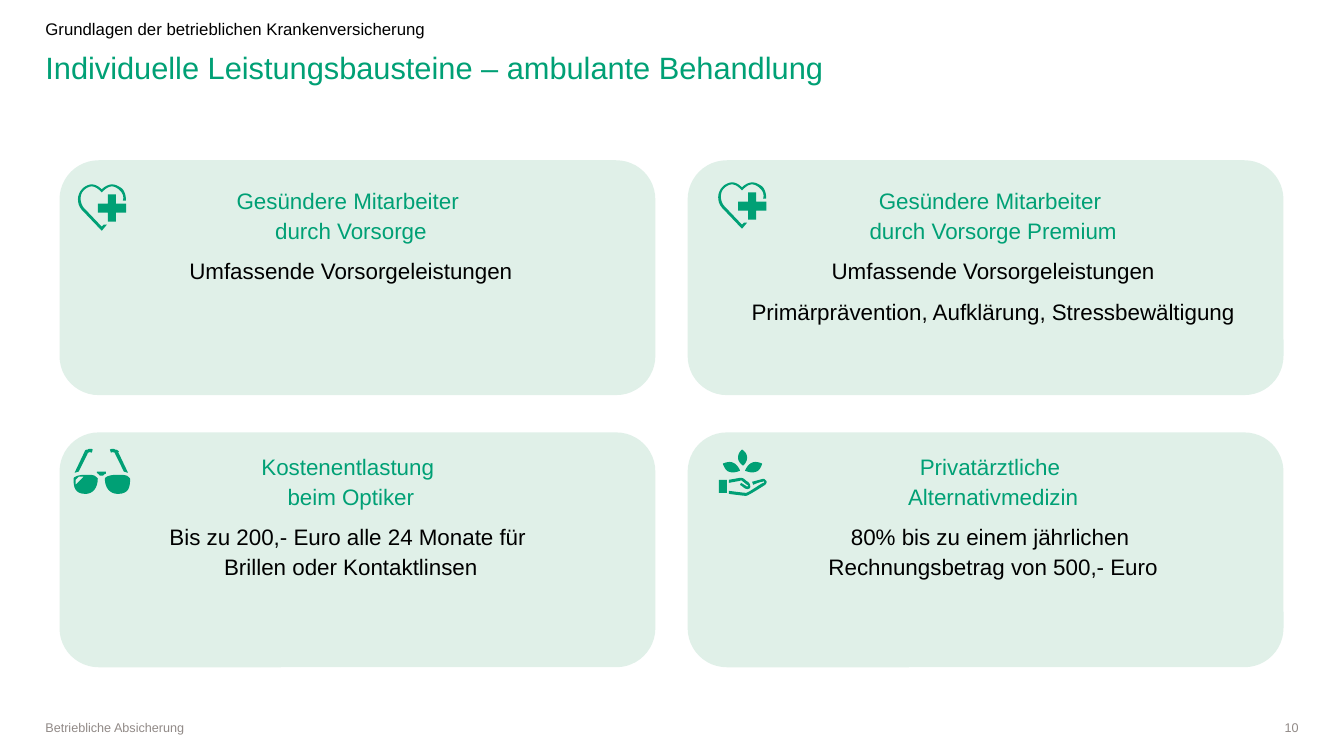
"""Build the slide on outpatient benefit modules of company health insurance."""
from dataclasses import dataclass
from typing import NamedTuple

from lxml import etree
from pptx import Presentation
from pptx.dml.color import RGBColor
from pptx.enum.shapes import MSO_SHAPE
from pptx.enum.text import MSO_ANCHOR, MSO_AUTO_SIZE, PP_ALIGN
from pptx.oxml.ns import qn
from pptx.util import Inches, Pt

ROUNDED, RECTANGLE = MSO_SHAPE.ROUNDED_RECTANGLE, MSO_SHAPE.RECTANGLE
LEFT, CENTER, RIGHT = PP_ALIGN.LEFT, PP_ALIGN.CENTER, PP_ALIGN.RIGHT
TOP, BOTTOM = MSO_ANCHOR.TOP, MSO_ANCHOR.BOTTOM
NO_FIT = MSO_AUTO_SIZE.NONE
GREEN, MINT, GREY, BLACK = "00A075", "E0F0E8", "918A87", "000000"
COMPARISON_LAYOUT = 4
CURVE_STEPS = 8
FINENESS = 100
MARGIN = 0.45


class Box(NamedTuple):
    left: float
    top: float
    width: float
    height: float


class Line(NamedTuple):
    text: str
    size: int
    color: str
    align: PP_ALIGN = LEFT
    spacing: float = 1.0


@dataclass(frozen=True)
class Grid:
    origin: Box
    column_step: float
    row_step: float

    def cell(self, column: int, row: int) -> Box:
        """Return the box at a column and row."""
        left, top, width, height = self.origin
        return Box(left + column * self.column_step, top + row * self.row_step, width, height)


@dataclass(frozen=True)
class Module:
    column: int
    row: int
    heading: str
    benefits: tuple[str, ...]
    icon: tuple[str, ...]
    icon_left: float
    icon_top: float


CARDS = Grid(Box(0.59, 1.59, 5.91, 2.33), 6.23, 2.7)
TEXTS = Grid(Box(MARGIN, 1.83, 6.06, 2.32), 6.37, 2.64)
SLEEVE = Box(7.13, 4.76, 0.08, 0.13)

HEART = (
    "M 39,10 L 31,10 31,19 21,19 21,28 31,28 31,37 39,37 39,28 49,28 49,19 39,19",
    "M 45,4 C 42,2 39,0 35,0 32,0 28,2 26,4 L 25,5 C 22,2 19,0 15,0 12,0 8,2 6,4 "
    "0,10 0,19 5,25 L 25,46 30,40 27,40 25,42 7,23 C 3,18 3,10 7,6 9,4 12,2 15,2 "
    "18,2 21,4 23,6 L 25,8 27,6 C 29,4 32,2 35,2 38,2 41,4 43,6 46,9 47,12 46,16 "
    "L 49,16 C 49,12 48,7 45,4",
)
GLASSES = (
    "M 41,5 C 41,4 41,4 40,4 39,3 38,4 37,4 L 36,1 C 38,0 40,0 41,1 43,1 44,2 45,3",
    "M 14,5 L 11,3 C 11,2 12,1 14,1 15,0 18,0 19,1 L 18,4 C 17,4 16,3 15,4 14,4 14,4 14,5",
    "M 32,25 L 32,23 23,23 23,24 C 24,25 26,26 26,27 L 29,27 C 30,26 31,25 32,25",
    "M 21,27 C 19,26 15,26 12,26 5,26 0,28 0,30 0,38 1,45 12,45 19,45 24,39 24,30 "
    "24,29 22,28 21,27 M 7,31 L 2,36 2,31 5,28 10,28",
    "M 5,23 L 14,5 11,3 1,24 C 2,24 4,23 5,23",
    "M 54,24 L 44,3 41,5 50,23 C 51,23 53,24 54,24",
    "M 44,45 C 55,45 56,38 56,30 56,29 54,28 53,27 50,26 47,26 44,26 36,26 31,28 31,30 "
    "31,39 36,45 44,45",
)
HAND_WITH_LEAVES = (
    "M 31,38 C 30,39 28,40 25,38 24,37 21,35 21,35 L 22,33 27,36 C 28,37 28,37 29,36 "
    "29,36 29,35 28,35 L 23,31 C 23,31 22,30 21,31 L 10,33 10,30 21,28 "
    "C 22,28 23,28 25,29 25,29 28,32 29,32 32,35 31,37 31,38",
    "M 47,31 C 46,30 45,29 44,29 L 33,32 34,35 C 34,35 41,32 43,32 44,32 44,31 45,32 "
    "45,33 45,33 44,33 40,35 29,43 27,43 25,43 10,41 10,41 L 10,44 "
    "C 10,44 25,46 27,46 29,46 46,35 46,35 47,34 48,32 47,31",
    "M 10,22 C 15,24 21,21 21,21 21,21 19,15 14,13 10,11 4,14 4,14 4,14 6,21 10,22",
    "M 37,22 C 32,24 26,21 26,21 26,21 28,15 33,13 37,11 43,14 43,14 43,14 41,21 37,22",
    "M 28,8 C 28,13 24,16 24,16 24,16 19,13 19,8 19,3 23,0 23,0 23,0 28,3 28,8",
)

MODULES = (
    Module(0, 0, "Gesündere Mitarbeiter \vdurch Vorsorge",
           ("Umfassende Vorsorgeleistungen",), HEART, 0.76, 1.83),
    Module(1, 0, "Gesündere Mitarbeiter \vdurch Vorsorge Premium",
           ("Umfassende Vorsorgeleistungen", "Primärprävention, Aufklärung, Stressbewältigung"),
           HEART, 7.11, 1.81),
    Module(0, 1, "Kostenentlastung \vbeim Optiker",
           ("Bis zu 200,- Euro alle 24 Monate für \vBrillen oder Kontaktlinsen",),
           GLASSES, 0.73, 4.45),
    Module(1, 1, "Privatärztliche \vAlternativmedizin",
           ("80% bis zu einem jährlichen \vRechnungsbetrag von 500,- Euro",),
           HAND_WITH_LEAVES, 7.13, 4.46),
)


def paint(shape, color: str) -> None:
    """Give a shape a plain fill without line or shadow."""
    shape.fill.solid()
    shape.fill.fore_color.rgb = RGBColor.from_string(color)
    shape.line.fill.background()
    shape.shadow.inherit = False


def add_block(shapes, preset: MSO_SHAPE, box: Box, color: str):
    """Add a plain preset shape."""
    block = shapes.add_shape(preset, *map(Inches, box))
    paint(block, color)
    return block


def write(shape, box: Box, lines: list[Line], anchor: MSO_ANCHOR = TOP) -> None:
    """Place a text shape and fill it with formatted paragraphs."""
    shape.left, shape.top, shape.width, shape.height = map(Inches, box)
    frame = shape.text_frame
    frame.word_wrap, frame.auto_size, frame.vertical_anchor = True, NO_FIT, anchor
    frame.margin_left = frame.margin_top = frame.margin_right = frame.margin_bottom = 0
    for index, line in enumerate(lines):
        para = frame.add_paragraph() if index else frame.paragraphs[0]
        para.text = line.text
        properties = para._p.get_or_add_pPr()
        properties.set("marL", "0")
        properties.set("indent", "0")
        etree.SubElement(properties, qn("a:buNone"))
        para.alignment, para.line_spacing = line.align, line.spacing
        para.space_before = Pt(8 if index else 0)
        para.font.name, para.font.size, para.font.bold = "Arial", Pt(line.size), False
        para.font.color.rgb = RGBColor.from_string(line.color)


def add_label(shapes, box: Box, line: Line, anchor: MSO_ANCHOR = TOP) -> None:
    """Add a text box with one line."""
    write(shapes.add_textbox(*map(Inches, box)), box, [line], anchor)


def trace(outline: str) -> list[list[tuple[float, float]]]:
    """Turn an outline of moves, lines and cubic curves into contours of points."""
    contours, pending, mode = [], [], "M"
    for token in outline.split():
        if token in "MLC":
            mode = token
            continue
        x, y = token.split(",")
        pending.append((float(x) * FINENESS, float(y) * FINENESS))
        if mode == "M":
            contours.append(pending)
        elif mode == "L":
            contours[-1].extend(pending)
        elif len(pending) < 3:
            continue
        else:
            controls = [contours[-1][-1], *pending]
            for step in range(1, CURVE_STEPS + 1):
                t = step / CURVE_STEPS
                weights = ((1 - t) ** 3, 3 * t * (1 - t) ** 2, 3 * t * t * (1 - t), t ** 3)
                contours[-1].append(tuple(
                    sum(w * point[axis] for w, point in zip(weights, controls))
                    for axis in (0, 1)))
        pending = []
    return contours


def add_icon(shapes, module: Module):
    """Draw a module's icon as one group and return the group."""
    group = shapes.add_group_shape()
    for outline in module.icon:
        first, *holes = trace(outline)
        builder = group.shapes.build_freeform(*first[0], scale=Inches(0.01) / FINENESS)
        builder.add_line_segments(first[1:], close=True)
        for hole in holes:
            builder.move_to(*hole[0])
            builder.add_line_segments(hole[1:], close=True)
        origin = Inches(module.icon_left), Inches(module.icon_top)
        paint(builder.convert_to_shape(*origin), GREEN)
    return group


def main() -> None:
    """Build and save the deck."""
    deck = Presentation()
    deck.slide_width, deck.slide_height = Inches(13.33), Inches(7.5)
    page = deck.slides.add_slide(deck.slide_layouts[COMPARISON_LAYOUT])
    shapes = page.shapes
    title, *bodies = page.placeholders
    write(title, Box(MARGIN, 0.52, 12.44, 0.78),
          [Line("Individuelle Leistungsbausteine – ambulante Behandlung", 22, GREEN, spacing=0.9)])
    add_label(shapes, Box(MARGIN, 0.21, 8.35, 0.16),
              Line("Grundlagen der betrieblichen Krankenversicherung", 12, BLACK, spacing=0.9))
    for module, body in zip(MODULES, bodies):
        card = add_block(shapes, ROUNDED, CARDS.cell(module.column, module.row), MINT)
        card.element.getparent().insert(2, card.element)
        lines = [Line(module.heading, 16, GREEN, CENTER, 1.1)]
        lines += [Line(benefit, 16, BLACK, CENTER, 1.1) for benefit in module.benefits]
        write(body, TEXTS.cell(module.column, module.row), lines)
        icon = add_icon(shapes, module)
        if module.icon is HAND_WITH_LEAVES:
            add_block(icon.shapes, RECTANGLE, SLEEVE, GREEN)
    add_label(shapes, Box(MARGIN, 7.16, 5.12, 0.13),
              Line("Betriebliche Absicherung", 9, GREY), BOTTOM)
    add_label(shapes, Box(12.37, 7.16, 0.51, 0.13), Line("10", 9, GREY, RIGHT), BOTTOM)
    deck.save("out.pptx")


if __name__ == "__main__":
    main()
